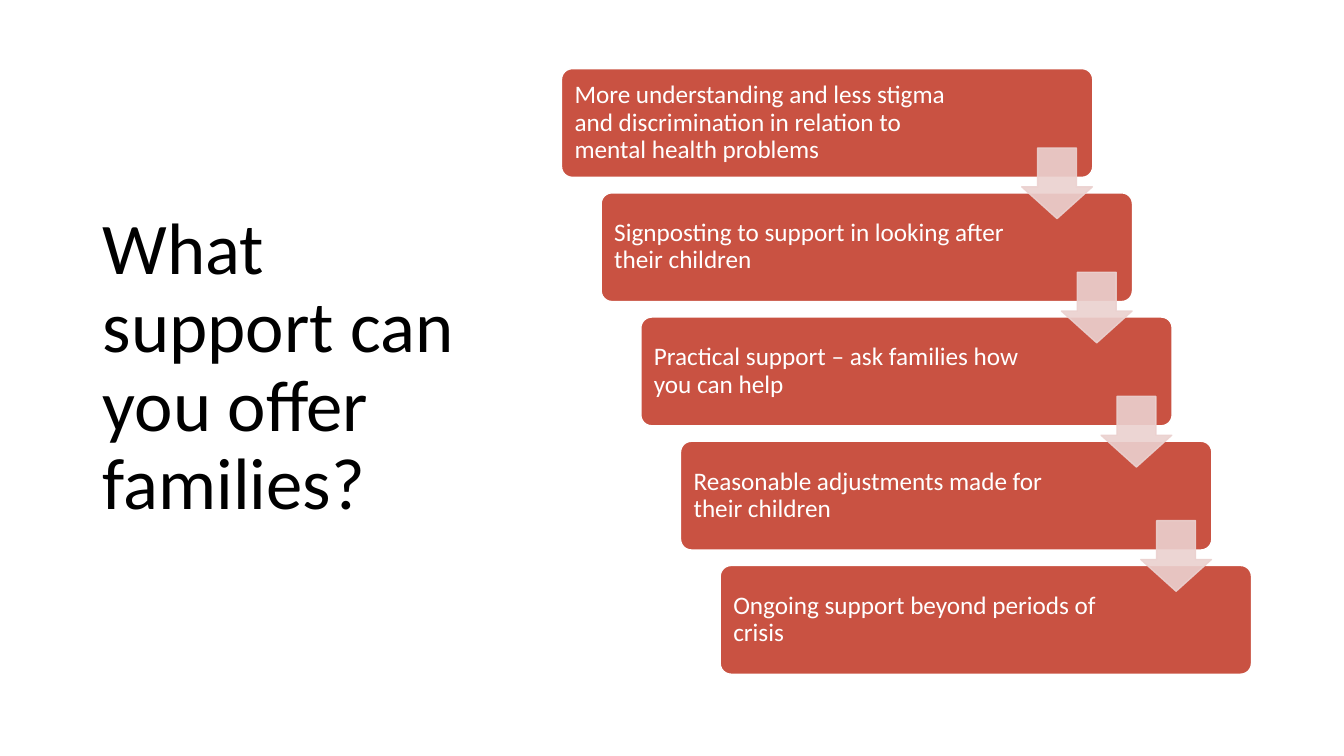
"""Build a slide with five stepped cards on support for families."""
from lxml import etree
from pptx import Presentation
from pptx.dml.color import RGBColor
from pptx.enum.shapes import MSO_SHAPE
from pptx.enum.text import MSO_ANCHOR, PP_ALIGN
from pptx.oxml.ns import qn
from pptx.util import Cm, Pt

CARD = MSO_SHAPE.ROUNDED_RECTANGLE
ARROW = MSO_SHAPE.DOWN_ARROW
MIDDLE = MSO_ANCHOR.MIDDLE
LEFT = PP_ALIGN.LEFT

COLORS = {"white": "FFFFFF", "black": "000000", "card": "C95242", "arrow": "EBD1CF"}
STEPS = [
    "More understanding and less stigma and discrimination in relation to mental health problems",
    "Signposting to support in looking after their children",
    "Practical support – ask families how you can help",
    "Reasonable adjustments made for their children",
    "Ongoing support beyond periods of crisis",
]
STEP_X, STEP_Y = 1.0, 3.13


def write(shape, text, size, color, right=0.25):
    frame = shape.text_frame
    frame.word_wrap = True
    frame.vertical_anchor = MIDDLE
    frame.margin_left, frame.margin_right = Cm(0.25), Cm(right)
    paragraph = frame.paragraphs[0]
    paragraph.alignment = LEFT
    paragraph.line_spacing = 0.9
    run = paragraph.add_run()
    run.text = text
    run.font.name = "Calibri"
    run.font.size = Pt(size)
    run.font.color.rgb = RGBColor.from_string(COLORS[color])


def add_block(kind, left, top, width, height, fill, line):
    block = slide.shapes.add_shape(kind, Cm(left), Cm(top), Cm(width), Cm(height))
    block.shadow.inherit = False
    block.fill.solid()
    block.fill.fore_color.rgb = RGBColor.from_string(COLORS[fill])
    block.line.color.rgb = RGBColor.from_string(COLORS[line])
    block.line.width = Pt(1)
    return block


prs = Presentation()
prs.slide_width, prs.slide_height = Cm(33.87), Cm(19.05)
slide = prs.slides.add_slide(prs.slide_layouts[6])
slide.background.fill.solid()
slide.background.fill.fore_color.rgb = RGBColor.from_string(COLORS["white"])

question = slide.shapes.add_textbox(Cm(2.34), Cm(1.55), Cm(9.37), Cm(15.47))
write(question, "What support can you offer families?", size=52, color="black")

for i, step in enumerate(STEPS):
    card = add_block(CARD, 14.15 + i * STEP_X, 1.73 + i * STEP_Y, 13.39, 2.74, "card", "white")
    card.adjustments[0] = 0.1
    write(card, step, size=18, color="white", right=3.38 if i == 0 else 3.02)

for i in range(len(STEPS) - 1):
    arrow = add_block(ARROW, 25.75 + i * STEP_X, 3.73 + i * STEP_Y, 1.78, 1.78, "arrow", "arrow")
    arrow.adjustments[0] = 0.55
    arrow.adjustments[1] = 0.45
    for tint in list(arrow.element.spPr.iter(qn("a:srgbClr"))):
        etree.SubElement(tint, qn("a:alpha"), val="90000")

prs.save("out.pptx")
